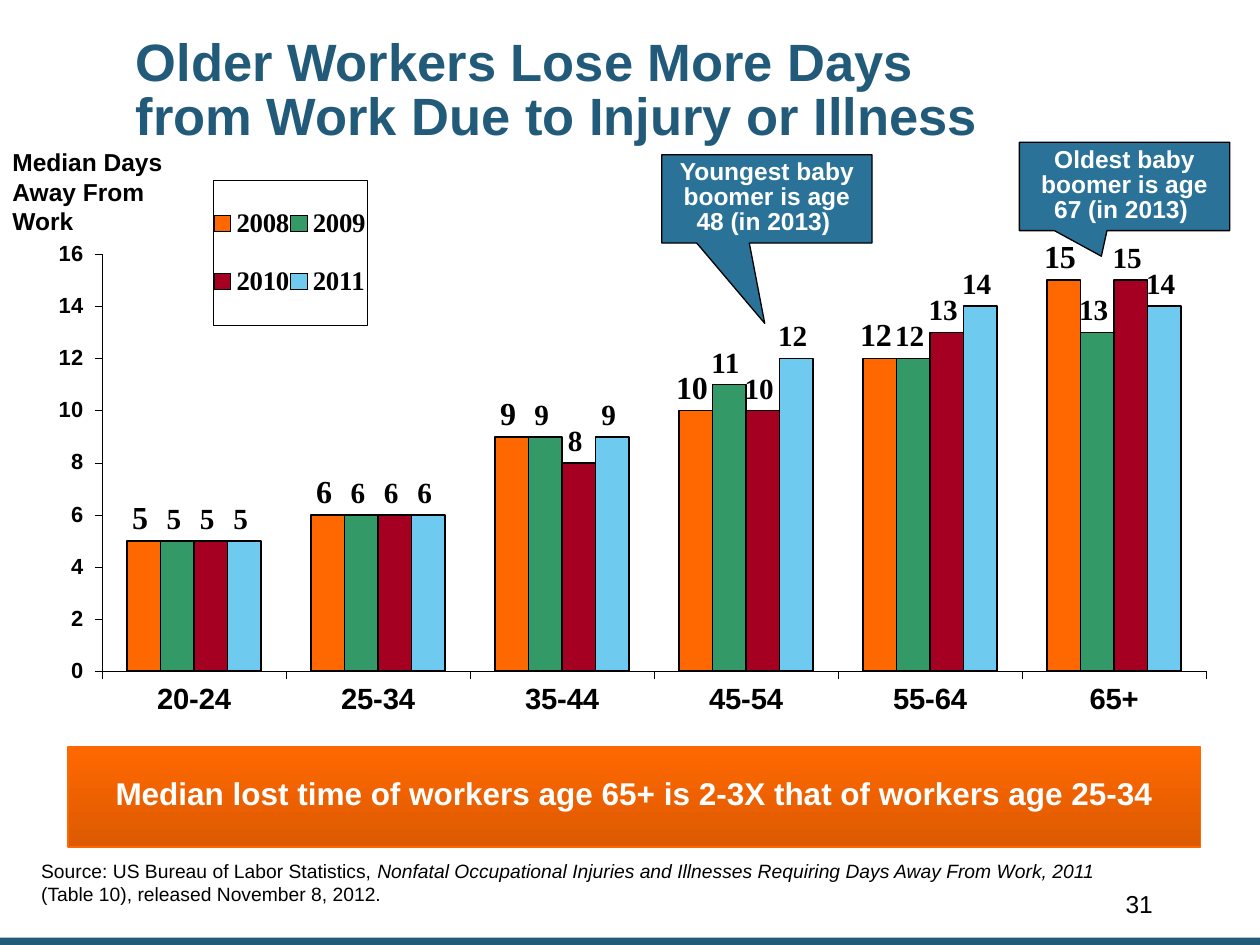
"""Build the slide on days lost from work by age group."""
import pptx
import pptx.chart.data
import pptx.dml.color
import pptx.enum.chart
import pptx.enum.shapes
import pptx.enum.text
import pptx.oxml
import pptx.oxml.ns
import pptx.util

Cm = pptx.util.Cm
Pt = pptx.util.Pt
qn = pptx.oxml.ns.qn
ALIGN = pptx.enum.text.PP_ALIGN
ANCHOR = pptx.enum.text.MSO_ANCHOR
SHAPE = pptx.enum.shapes.MSO_SHAPE
CHART = pptx.enum.chart

HUES = {
    "navy": "225A7A", "blue": "2B7299", "black": "000000", "white": "FFFFFF",
    "orange": "FF6801", "rust": "DC5A01", "green": "339966",
    "red": "A50021", "sky": "6FCAEF",
}
AGES = ["20-24", "25-34", "35-44", "45-54", "55-64", "65+"]
YEARS = [
    ("2008", "orange", 18.3, [5, 6, 9, 10, 12, 15]),
    ("2009", "green", 16.7, [5, 6, 9, 11, 12, 13]),
    ("2010", "red", 16.7, [5, 6, 8, 10, 13, 15]),
    ("2011", "sky", 16.7, [5, 6, 9, 12, 14, 14]),
]
DAYS = r"#,##0_);[Red]\(#,##0\)"


def rgb(hue):
    return pptx.dml.color.RGBColor.from_string(HUES[hue])


def style(font, size, hue="black", bold=True, face="Arial"):
    font.size, font.bold, font.name = Pt(size), bold, face
    font.color.rgb = rgb(hue)


def edge(line, hue, width):
    line.color.rgb = rgb(hue)
    line.width = Pt(width)


def write(frame, lines, size, hue="black", bold=True, align=ALIGN.LEFT,
          anchor=ANCHOR.TOP, space=None):
    """Fill a frame with lines, each a list of (text, italic) runs."""
    frame.word_wrap = True
    frame.vertical_anchor = anchor
    para = frame.paragraphs[0]
    para.alignment = align
    para.line_spacing = space
    for row, line in enumerate(lines):
        if row:
            para.add_line_break()
        for text, slant in line:
            run = para.add_run()
            run.text = text
            style(run.font, size, hue, bold)
            run.font.italic = slant


def label(slide, box, lines, size, **look):
    frame = slide.shapes.add_textbox(*map(Cm, box)).text_frame
    write(frame, lines, size, **look)
    return frame


def block(slide, kind, box, hue):
    shape = slide.shapes.add_shape(kind, *map(Cm, box))
    shape.shadow.inherit = False
    shape.fill.solid()
    shape.fill.fore_color.rgb = rgb(hue)
    shape.line.fill.background()
    return shape


def callout(slide, box, tip, text):
    shape = block(slide, SHAPE.RECTANGULAR_CALLOUT, box, "blue")
    shape.adjustments[0], shape.adjustments[1] = tip
    edge(shape.line, "black", 0.75)
    write(shape.text_frame, [[(text, False)]], 14, "white",
          align=ALIGN.CENTER, space=0.85)


def banner(slide, box, text):
    shape = block(slide, SHAPE.RECTANGLE, box, "orange")
    shape.fill.gradient()
    shape.fill.gradient_angle = 270
    for stop, hue in zip(shape.fill.gradient_stops, ("orange", "rust")):
        stop.color.rgb = rgb(hue)
    edge(shape.line, "orange", 1)
    shape.text_frame.margin_bottom = Cm(0.18)
    write(shape.text_frame, [[(text, False)]], 18, "white",
          align=ALIGN.CENTER, anchor=ANCHOR.MIDDLE, space=0.85)


def layout(box, inner=False):
    """Return a manual chart layout from x, y, w, h fractions."""
    target = '<c:layoutTarget val="inner"/>' if inner else ""
    modes = "".join(f'<c:{n}Mode val="edge"/>' for n in "xy")
    sizes = "".join(f'<c:{n} val="{v}"/>' for n, v in zip("xywh", box))
    return pptx.oxml.parse_xml(
        f'<c:layout {pptx.oxml.ns.nsdecls("c")}><c:manualLayout>'
        f"{target}{modes}{sizes}</c:manualLayout></c:layout>")


def place(node, spot, part):
    for old in node.findall(qn("c:layout")):
        node.remove(old)
    node.insert(spot, part)


def axis(item, size):
    style(item.tick_labels.font, size)
    item.has_major_gridlines = False
    item.major_tick_mark = CHART.XL_TICK_MARK.OUTSIDE
    item.minor_tick_mark = CHART.XL_TICK_MARK.NONE
    edge(item.format.line, "black", 0.23)


def legend(chart):
    chart.has_legend = True
    key = chart.legend
    key.position = CHART.XL_LEGEND_POSITION.RIGHT
    key.include_in_layout = False
    style(key.font, 15.3, face="Times New Roman")
    node = chart._chartSpace.find(f".//{qn('c:legend')}")
    place(node, 1, layout((0.143, 0.01, 0.13, 0.25)))
    node.find(qn("c:overlay")).addnext(pptx.oxml.parse_xml(
        f'<c:spPr {pptx.oxml.ns.nsdecls("c", "a")}><a:ln w="3175"><a:solidFill>'
        f'<a:srgbClr val="{HUES["black"]}"/></a:solidFill></a:ln></c:spPr>'))


def bars(slide, box):
    data = pptx.chart.data.CategoryChartData()
    data.categories = AGES
    for name, _, _, vals in YEARS:
        data.add_series(name, vals)
    chart = slide.shapes.add_chart(
        CHART.XL_CHART_TYPE.COLUMN_CLUSTERED, *map(Cm, box), data).chart
    chart.has_title = False
    style(chart.font, 16.7, face="Times New Roman")
    plot = chart.plots[0]
    plot.gap_width, plot.overlap, plot.vary_by_categories = 150, 0, False
    for item, (_, hue, size, _) in zip(plot.series, YEARS):
        item.format.fill.solid()
        item.format.fill.fore_color.rgb = rgb(hue)
        edge(item.format.line, "black", 0.93)
        tags = item.data_labels
        tags.show_value = True
        tags.position = CHART.XL_LABEL_POSITION.OUTSIDE_END
        tags.number_format, tags.number_format_is_linked = DAYS, False
        style(tags.font, size, face="Times New Roman")
    axis(chart.category_axis, 16.7)
    scale = chart.value_axis
    axis(scale, 12.5)
    scale.minimum_scale, scale.maximum_scale, scale.major_unit = 0, 16, 2
    scale.tick_labels.number_format = DAYS
    scale.tick_labels.number_format_is_linked = False
    legend(chart)
    area = chart._chartSpace.find(f".//{qn('c:plotArea')}")
    place(area, 0, layout((0.05, 0.138, 0.928, 0.718), True))


def main():
    deck = pptx.Presentation()
    deck.slide_width, deck.slide_height = Cm(25.4), Cm(19.05)
    slide = deck.slides.add_slide(deck.slide_layouts[6])
    block(slide, SHAPE.RECTANGLE, (0, 18.9, 25.4, 0.15), "navy")
    label(slide, (18.21, 17.58, 5.28, 1.27), [[("31", False)]], 14,
          bold=False, align=ALIGN.RIGHT, anchor=ANCHOR.MIDDLE)
    title = label(slide, (0.99, 0.66, 20.52, 1.73),
                  [[("Older Workers Lose More Days", False)],
                   [("from Work Due to Injury or Illness", False)]],
                  30, hue="navy", space=0.85)
    title.margin_left = Cm(1.75)
    bars(slide, (0.86, 3.51, 23.98, 11.71))
    label(slide, (0.58, 17.2, 22.45, 1.19),
          [[("Source: US Bureau of Labor Statistics, ", False),
            ("Nonfatal Occupational Injuries and Illnesses Requiring "
             "Days Away From Work, 2011 ", True),
            ("(Table 10), released November 8, 2012.", False)]],
          11, bold=False)
    label(slide, (0, 2.84, 3.66, 2.03),
          [[("Median Days Away From Work", False)]], 14)
    callout(slide, (13.34, 3.12, 4.24, 1.78), (-0.01, 1.41),
            "Youngest baby boomer is age 48 (in 2013) ")
    banner(slide, (1.37, 15.06, 22.83, 2.01),
           "Median lost time of workers age 65+ is 2-3X that of workers age 25-34")
    callout(slide, (20.55, 2.87, 4.24, 1.78), (-0.11, 0.79),
            "Oldest baby boomer is age 67 (in 2013) ")
    deck.save("out.pptx")


if __name__ == "__main__":
    main()
